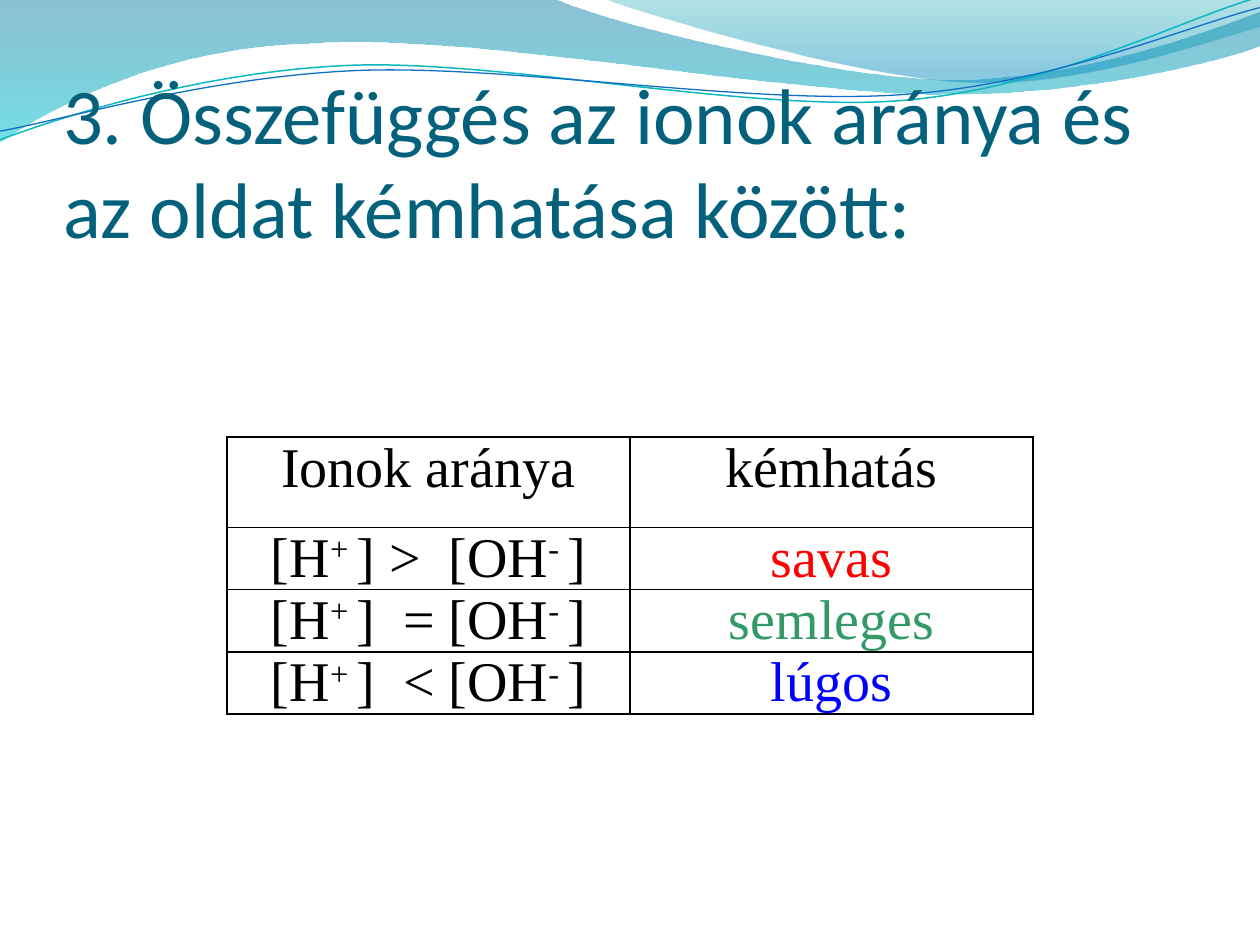
"""Build the slide on ion ratio and the character of a solution."""
from dataclasses import dataclass

from lxml import etree
from pptx import Presentation
from pptx import util as u
from pptx.dml.color import RGBColor
from pptx.enum import text
from pptx.oxml import parse_xml
from pptx.oxml.ns import nsdecls, qn

COLORS = {
    "title": "04617B", "ink": "000000", "acid": "FF0000", "neutral": "339966", "base": "0000FF",
    "deep": "0074A1", "aqua": "00C6CF", "teal": "00A1A9", "sky": "008BBF",
    "teal_line": "0AB8BF", "blue_line": "0F6FC6",
}


@dataclass
class Stop:
    pos: int
    color: str
    opacity: int


@dataclass
class Wave:
    """Outline in points: a 2-tuple is a line end, a 6-tuple a cubic curve."""
    start: tuple
    segments: list
    stops: tuple = ()
    line: str = ""
    weight: float = 0


@dataclass
class Row:
    height: float
    ratio: list
    label: str
    color: str


def ion_ratio(sign: str) -> list:
    return [("[H", 0), ("+ ", 30), (f"]{sign}[OH", 0), ("- ", 30), ("]", 0)]


WAVES = [
    Wave((0, 0), [(316.8, -0.7), (342.7, 12.2, 478.1, 45.4, 545.8, 45.4),
                  (614.2, 45.4, 689.8, 18.7, 720, 6.5), (720.7, 25.9),
                  (707.8, 31.7, 626.4, 54.7, 537.1, 54), (447.8, 54, 275, 20.2, 185, 24.5),
                  (92.9, 25.9, 33.1, 59.8, -0.7, 81.4)],
         stops=(Stop(0, "deep", 45), Stop(100, "aqua", 55))),
    Wave((344.9, -0.7), [(366.5, 7.9, 491, 44.6, 553.7, 46.8),
                         (616.3, 49.7, 691.9, 23, 720, 15.1), (720, 0)],
         stops=(Stop(0, "teal", 30), Stop(80, "sky", 45))),
    Wave((0, 79.9), [(34.6, 67, 113.8, 41, 199.4, 37.4), (284.4, 33.8, 427, 64.1, 513.4, 57.6),
                     (599.8, 51.1, 675.4, 10.8, 718.6, -1.4)], line="teal_line", weight=0.85),
    Wave((0, 74.9), [(33.8, 69.1, 118.1, 43.9, 203.8, 40.3), (290.2, 36.7, 429.8, 60.5, 516.2, 54),
                     (601.9, 48.2, 677.5, 15.1, 720, 4.3)], line="blue_line", weight=0.75),
]
ROWS = [
    Row(51.6, [("Ionok aránya", 0)], "kémhatás", "ink"),
    Row(21, ion_ratio(" >  "), "savas", "acid"),
    Row(21, ion_ratio("  = "), "semleges", "neutral"),
    Row(21, ion_ratio("  < "), "lúgos", "base"),
]


def rgb(name: str) -> RGBColor:
    return RGBColor.from_string(COLORS[name])


def curve_segments(sp, segments: list) -> None:
    lines = iter(list(sp.element.iter(qn("a:lnTo"))))
    for seg in segments:
        first = next(lines)
        if len(seg) == 2:
            continue
        curve = etree.Element(qn("a:cubicBezTo"))
        first.addprevious(curve)
        for line in (first, next(lines), next(lines)):
            curve.append(line[0])
            line.getparent().remove(line)


def gradient_xml(stops: tuple) -> str:
    gs = "".join(f'<a:gs pos="{st.pos * 1000}"><a:srgbClr val="{COLORS[st.color]}">'
                 f'<a:alpha val="{st.opacity * 1000}"/></a:srgbClr></a:gs>' for st in stops)
    return (f'<a:gradFill {nsdecls("a")} rotWithShape="1"><a:gsLst>{gs}</a:gsLst>'
            '<a:lin ang="5400000" scaled="0"/></a:gradFill>')


def draw_wave(s, wave: Wave) -> None:
    flat = [u.Pt(v) for seg in wave.segments for v in seg]
    fb = s.shapes.build_freeform(u.Pt(wave.start[0]), u.Pt(wave.start[1]))
    fb.add_line_segments(list(zip(flat[::2], flat[1::2])), close=bool(wave.stops))
    sp = fb.convert_to_shape()
    curve_segments(sp, wave.segments)
    sp.shadow.inherit = False
    sp.fill.background()
    if wave.stops:
        sp.line.fill.background()
        sp_pr = sp.element.spPr
        sp_pr.replace(sp_pr.find(qn("a:noFill")), parse_xml(gradient_xml(wave.stops)))
    else:
        sp.line.color.rgb = rgb(wave.line)
        sp.line.width = u.Pt(wave.weight)


def draw_title(s, title: str) -> None:
    sp = s.shapes.title
    sp.element.getparent().append(sp.element)
    sp.left, sp.top, sp.width, sp.height = u.Pt(36), u.Pt(55.5), u.Pt(648), u.Pt(90)
    tf = sp.text_frame
    tf.text = title
    tf.word_wrap = True
    tf.auto_size = text.MSO_AUTO_SIZE.NONE
    tf.vertical_anchor = text.MSO_ANCHOR.BOTTOM
    tf.margin_left = tf.margin_right = tf.margin_bottom = 0
    tf.margin_top = u.Pt(3.6)
    p = tf.paragraphs[0]
    p.alignment = text.PP_ALIGN.LEFT
    font = p.runs[0].font
    font.name, font.size, font.color.rgb = "Calibri", u.Pt(45), rgb("title")


def fill_cell(cell, runs: list, color: str) -> None:
    cell.margin_left = cell.margin_right = u.Pt(5)
    cell.margin_top = cell.margin_bottom = 0
    cell.fill.background()
    p = cell.text_frame.paragraphs[0]
    p.alignment = text.PP_ALIGN.CENTER
    for words, baseline in runs:
        r = p.add_run()
        r.text = words
        r.font.name, r.font.size, r.font.color.rgb = "Times New Roman", u.Pt(32), rgb(color)
        if baseline:
            r._r.get_or_add_rPr().set("baseline", str(baseline * 1000))
    tc_pr = cell._tc.get_or_add_tcPr()
    for i, side in enumerate("LRTB"):
        tc_pr.insert(i, parse_xml(
            f'<a:ln{side} {nsdecls("a")} w="{u.Pt(1)}"><a:solidFill>'
            f'<a:srgbClr val="{COLORS["ink"]}"/></a:solidFill></a:ln{side}>'))


def draw_table(s, rows: list) -> None:
    height = u.Pt(167)
    frame = s.shapes.add_table(len(rows), 2, u.Pt(129.6), u.Pt(249.8), u.Pt(460.8), height)
    table = frame.table
    table.first_row = table.horz_banding = False
    for i, row in enumerate(rows):
        table.rows[i].height = u.Pt(row.height)
        fill_cell(table.cell(i, 0), row.ratio, "ink")
        fill_cell(table.cell(i, 1), [(row.label, 0)], row.color)
    frame.height = height


def main() -> None:
    prs = Presentation()
    prs.slide_width, prs.slide_height = u.Pt(720), u.Pt(540)
    s = prs.slides.add_slide(prs.slide_layouts[5])
    for wave in WAVES:
        draw_wave(s, wave)
    draw_title(s, "3. Összefüggés az ionok aránya és az oldat kémhatása között:")
    draw_table(s, ROWS)
    prs.save("out.pptx")


if __name__ == "__main__":
    main()
